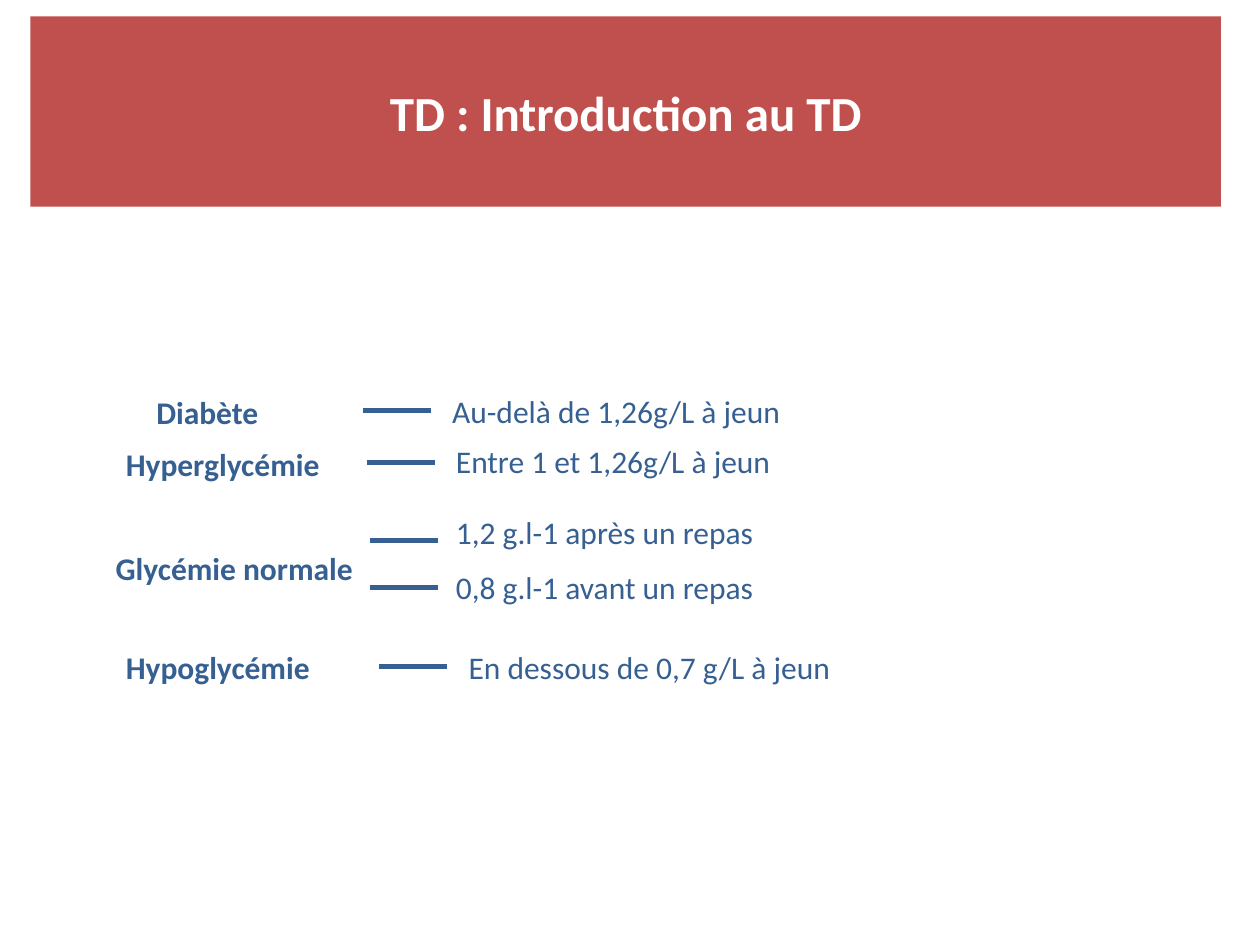
from lxml import etree
from pptx import Presentation
from pptx.dml.color import RGBColor
from pptx.enum.shapes import MSO_CONNECTOR
from pptx.enum.text import MSO_ANCHOR, MSO_AUTO_SIZE, PP_ALIGN
from pptx.oxml.ns import qn
from pptx.util import Inches, Pt

LEFT, CENTER = PP_ALIGN.LEFT, PP_ALIGN.CENTER
MIDDLE, TOP = MSO_ANCHOR.MIDDLE, MSO_ANCHOR.TOP
NO_AUTOFIT = MSO_AUTO_SIZE.NONE
STRAIGHT = MSO_CONNECTOR.STRAIGHT

COLORS = {"banner": "C0504D", "text": "376092", "white": "FFFFFF"}
TITLE_FONT = {"name": "Calibri", "size": Pt(28), "bold": True}
TERM_FONT = {"name": "Calibri", "size": Pt(18), "bold": True}
RANGE_FONT = {"name": "Calibri", "size": Pt(18), "bold": False}

ROW_HEIGHT = 0.4
DASH_LENGTH = 0.54

# term, left, top, width, alignment, white background
TERMS = [
    ("Hypoglycémie", 0.9, 5.09, 1.81, LEFT, True),
    ("Hyperglycémie", 0.9, 3.48, 1.81, LEFT, True),
    ("Diabète", 0.74, 3.07, 1.81, CENTER, True),
    ("Glycémie normale", 0.54, 4.31, 2.64, CENTER, False),
]
# range, left, top, width, dash left, dash height
RANGES = [
    ("Au-delà de 1,26g/L à jeun", 3.49, 3.06, 2.84, 2.88, 3.26),
    ("Entre 1 et 1,26g/L à jeun", 3.52, 3.46, 2.73, 2.91, 3.67),
    ("1,2 g.l-1 après un repas", 3.52, 4.02, 2.59, 2.94, 4.29),
    ("0,8 g.l-1 avant un repas", 3.52, 4.46, 2.59, 2.94, 4.66),
    ("En dessous de 0,7 g/L à jeun", 3.62, 5.09, 3.11, 3.01, 5.29),
]


def rgb(key):
    return RGBColor.from_string(COLORS[key])


def fill_solid(shape, color):
    shape.fill.solid()
    shape.fill.fore_color.rgb = rgb(color)


def write_text(shape, text, font, color, align=LEFT, anchor=TOP, wrap=True):
    frame = shape.text_frame
    frame.auto_size = NO_AUTOFIT
    frame.word_wrap = wrap
    frame.vertical_anchor = anchor
    paragraph = frame.paragraphs[0]
    paragraph.alignment = align
    run = paragraph.add_run()
    run.text = text
    for attribute, value in font.items():
        setattr(run.font, attribute, value)
    run.font.color.rgb = rgb(color)


def add_banner_title(slide, text):
    title = slide.shapes.title
    title.left, title.top = Inches(0.24), Inches(0.13)
    title.width, title.height = Inches(9.45), Inches(1.51)
    fill_solid(title, "banner")
    write_text(title, text, TITLE_FONT, "white", CENTER, MIDDLE)


def add_label(slide, text, left, top, width, font, align=LEFT, wrap=True):
    label = slide.shapes.add_textbox(
        Inches(left), Inches(top), Inches(width), Inches(ROW_HEIGHT))
    write_text(label, text, font, "text", align, wrap=wrap)
    return label


def add_dash(slide, left, y):
    """Draw the short line that leads from a term to its range."""
    dash = slide.shapes.add_connector(
        STRAIGHT, Inches(left), Inches(y), Inches(left + DASH_LENGTH), Inches(y))
    dash.line.color.rgb = rgb("text")
    dash.line.width = Pt(3)
    etree.SubElement(dash.element.spPr, qn("a:effectLst"))


def main():
    presentation = Presentation()
    presentation.slide_width = Inches(10)
    presentation.slide_height = Inches(7.5)
    title_only = presentation.slide_layouts[5]
    slide = presentation.slides.add_slide(title_only)

    add_banner_title(slide, "TD : Introduction au TD")
    for term, left, top, width, align, has_background in TERMS:
        label = add_label(slide, term, left, top, width, TERM_FONT, align)
        if has_background:
            fill_solid(label, "white")
    for blood_sugar, left, top, width, dash_left, dash_y in RANGES:
        add_label(slide, blood_sugar, left, top, width, RANGE_FONT, wrap=False)
        add_dash(slide, dash_left, dash_y)

    presentation.save("out.pptx")


if __name__ == "__main__":
    main()
